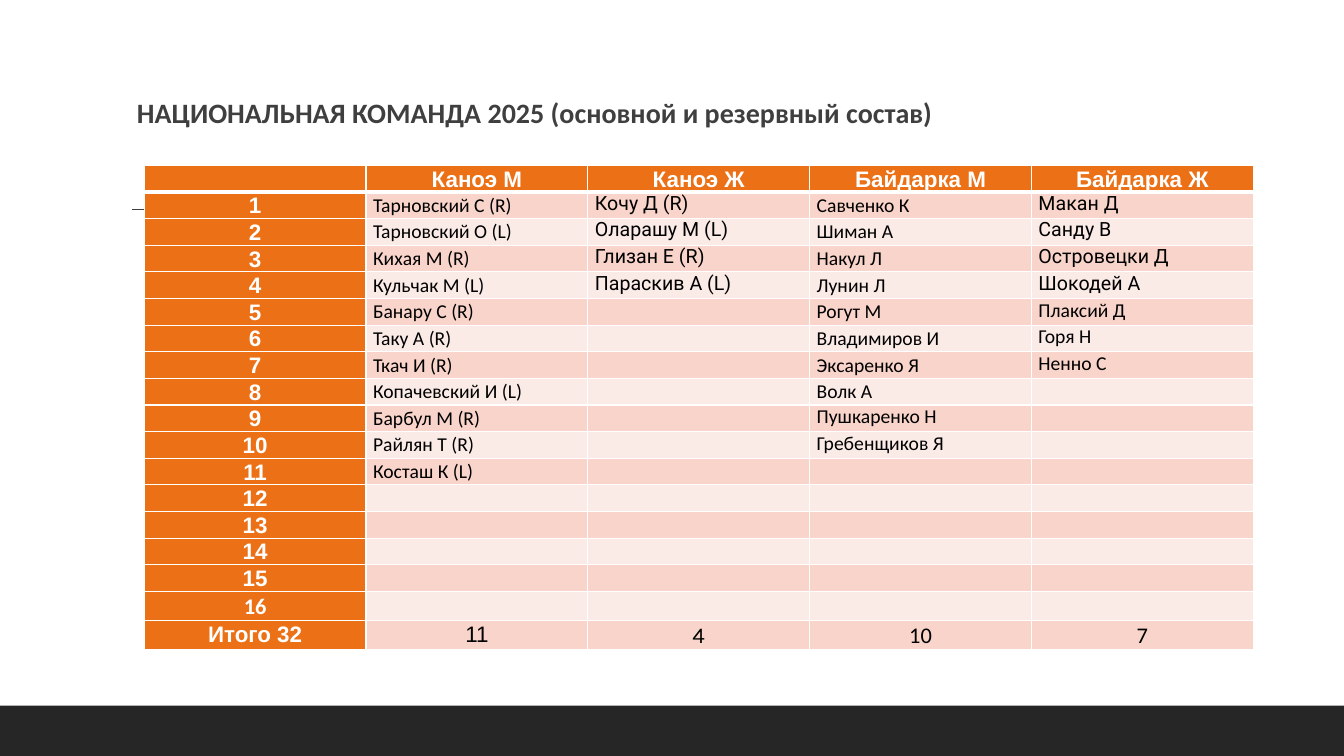
"""Builds the slide with the 2025 national canoe and kayak team roster."""
import lxml.etree
import pptx
import pptx.dml.color
import pptx.enum.shapes
import pptx.enum.text
import pptx.oxml.ns
import pptx.util

Inches = pptx.util.Inches
qn = pptx.oxml.ns.qn
ORANGE, WHITE, BLACK, GREY = "EC7016", "FFFFFF", "000000", "3F3F3F"
BANDS = ["FBEBE7", "F8D4CA"]


def paint(target, colour):
    if hasattr(target, "solid"):
        target.solid()
        target = target.fore_color
    target.rgb = pptx.dml.color.RGBColor.from_string(colour)


def style(paragraph, font, size, colour, bold, spacing=None):
    paragraph.line_spacing = spacing
    for run in paragraph.runs:
        run.font.name = font
        run.font.size = pptx.util.Pt(size)
        run.font.bold = bold
        paint(run.font.color, colour)


headings = ["", "Каноэ М", "Каноэ Ж", "Байдарка М", "Байдарка Ж"]
squads = [
    ["Тарновский С (R)", "Тарновский О (L)", "Кихая М (R)", "Кульчак М (L)",
     "Банару С (R)", "Таку А (R)", "Ткач И (R)", "Копачевский И (L)",
     "Барбул М (R)", "Райлян Т (R)", "Косташ К (L)"],
    ["Кочу Д (R)", "Оларашу М (L)", "Глизан Е (R)", "Параскив А (L)"],
    ["Савченко К", "Шиман А", "Накул Л", "Лунин Л", "Рогут М", "Владимиров И",
     "Эксаренко Я", "Волк А", "Пушкаренко Н", "Гребенщиков Я"],
    ["Макан Д", "Санду В", "Островецки Д", "Шокодей А", "Плаксий Д", "Горя Н", "Ненно С"],
]
places = 16
roster = [headings]
for place in range(places):
    roster.append([str(place + 1)] + [squad[place] if place < len(squad) else "" for squad in squads])
roster.append(["Итого 32"] + [str(len(squad)) for squad in squads])
total_row = len(roster) - 1
total_fonts = ["Arial", "Arial", "Karla", "Calibri", "Calibri"]
spaced_names = {1: 11, 2: 0, 3: 8, 4: 0}
roboto_names = {1: 0, 2: 4, 3: 0, 4: 4}

presentation = pptx.Presentation()
presentation.slide_width = Inches(13.33)
presentation.slide_height = Inches(7.5)
slide = presentation.slides.add_slide(presentation.slide_layouts[6])

footer = slide.shapes.add_shape(
    pptx.enum.shapes.MSO_SHAPE.RECTANGLE, 0, Inches(7), Inches(13.33), Inches(0.5))
footer.shadow.inherit = False
footer.line.fill.background()
paint(footer.fill, "262626")

rule = slide.shapes.add_connector(
    pptx.enum.shapes.MSO_CONNECTOR.STRAIGHT, Inches(1.31), Inches(2.08), Inches(12.21), Inches(2.08))
rule.line.width = pptx.util.Pt(1)
paint(rule.line.fill, GREY)
lxml.etree.SubElement(rule._element.spPr, qn("a:effectLst"))

team = slide.shapes.add_table(
    len(roster), len(headings), Inches(1.43), Inches(1.64), Inches(11), Inches(4.81)).table
for column in team.columns:
    column.width = Inches(2.2)
for r, entries in enumerate(roster):
    team.rows[r].height = Inches(0.24 if r == 0 else 0.29 if r >= places else 0.26)
    for c, entry in enumerate(entries):
        cell = team.cell(r, c)
        cell.margin_left = cell.margin_right = Inches(0.07)
        cell.margin_top = cell.margin_bottom = 0
        for side in ("lnL", "lnR", "lnT", "lnB"):
            thick = (r == 0 and side == "lnB") or (r == 1 and side == "lnT")
            border = lxml.etree.SubElement(
                cell._tc.get_or_add_tcPr(), qn("a:" + side), w=str(pptx.util.Pt(3 if thick else 1)))
            border_fill = lxml.etree.SubElement(border, qn("a:solidFill"))
            lxml.etree.SubElement(border_fill, qn("a:srgbClr"), val=WHITE)
        label = r == 0 or c == 0
        paint(cell.fill, ORANGE if label else BANDS[r % 2])

        paragraph = cell.text_frame.paragraphs[0]
        if not entry:
            lxml.etree.SubElement(paragraph._p, qn("a:endParaRPr"), sz="1400")
            continue
        paragraph.text = entry
        if label or r == total_row:
            paragraph.alignment = pptx.enum.text.PP_ALIGN.CENTER
            font = total_fonts[c] if r == total_row else "Calibri" if r == places else "Arial"
            style(paragraph, font, 16, WHITE if label else BLACK, label, 1.07)
        else:
            font = "Roboto" if r <= roboto_names[c] else "Calibri"
            style(paragraph, font, 14, BLACK, False, 1.07 if r <= spaced_names[c] else None)

title = slide.shapes.add_textbox(Inches(1.26), Inches(0.87), Inches(11.34), Inches(4.66)).text_frame
title.word_wrap = True
title.margin_left = Inches(0.1)
title.margin_right = 0
title.text = "НАЦИОНАЛЬНАЯ КОМАНДА 2025 (основной и резервный состав)"
style(title.paragraphs[0], "Calibri", 20, GREY, True, 1.1)

presentation.save("out.pptx")
